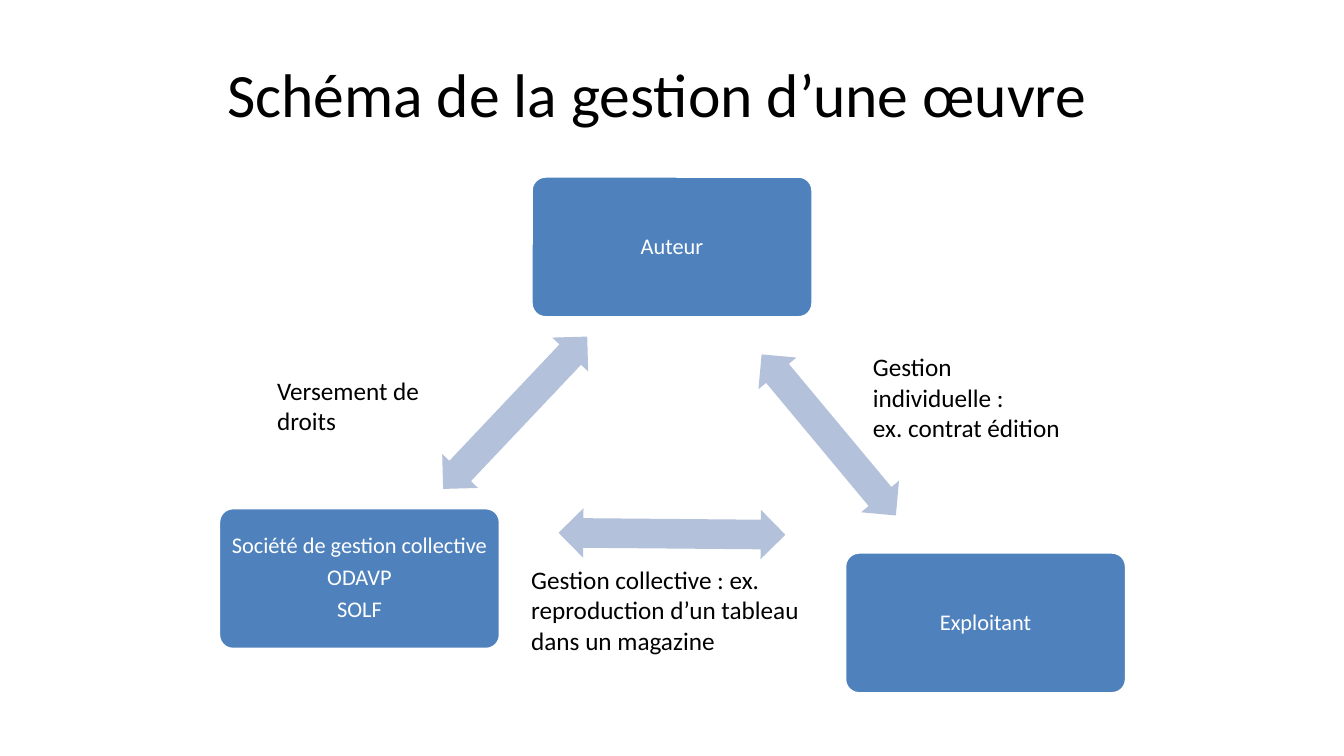
from pptx import Presentation
from pptx.dml.color import RGBColor
from pptx.enum import shapes, text
from pptx.util import Inches, Pt


def colour(hex_code):
    return RGBColor.from_string(hex_code)


def write(frame, wording, size, hex_code, align):
    """Fill a text frame, one paragraph per line of wording."""
    frame.word_wrap = True
    frame.text = wording
    for para in frame.paragraphs:
        para.alignment = align
        for span in para.runs:
            span.font.name = "Calibri"
            span.font.size = Pt(size)
            span.font.color.rgb = colour(hex_code)


deck = Presentation()
deck.slide_width, deck.slide_height = Inches(13.33), Inches(7.5)
page = deck.slides.add_slide(deck.slide_layouts[5])

title = page.shapes.title
title.left, title.top = Inches(0.67), Inches(0.3)
title.width, title.height = Inches(12), Inches(1.25)
write(title.text_frame, "Schéma de la gestion d’une œuvre", 44, "000000", text.PP_ALIGN.CENTER)
title.text_frame.vertical_anchor = text.MSO_ANCHOR.MIDDLE
title.text_frame.margin_right = Inches(0.4)

# Parties: left, top, wording
parties = [
    (5.27, 1.75, "Auteur"),
    (8.38, 5.48, "Exploitant"),
    (2.17, 5.04, "Société de gestion collective\nODAVP\nSOLF"),
]
for left, top, wording in parties:
    party = page.shapes.add_shape(
        shapes.MSO_SHAPE.ROUNDED_RECTANGLE, Inches(left), Inches(top), Inches(2.79), Inches(1.4))
    party.adjustments[0] = 0.1
    party.shadow.inherit = False
    party.fill.solid()
    party.fill.fore_color.rgb = colour("4F81BD")
    party.line.color.rgb = colour("FFFFFF")
    party.line.width = Pt(2)
    frame = party.text_frame
    write(frame, wording, 16, "FFFFFF", text.PP_ALIGN.CENTER)
    frame.vertical_anchor = text.MSO_ANCHOR.MIDDLE
    frame.margin_left = frame.margin_right = Inches(0.07)
    frame.margin_top = frame.margin_bottom = Inches(0.07)
    for para in frame.paragraphs:
        para.line_spacing = 0.9
        para.space_after = Pt(5.6)

# Exchanges between parties: left, top, width, rotation
exchanges = [
    (7.18, 4.07, 2.08, 50.2),
    (5.54, 5.05, 2.25, 180.5),
    (4.07, 3.85, 2.08, 313.4),
]
for left, top, width, rotation in exchanges:
    arrow = page.shapes.add_shape(
        shapes.MSO_SHAPE.LEFT_RIGHT_ARROW, Inches(left), Inches(top), Inches(width), Inches(0.49))
    arrow.adjustments[0] = 0.6
    arrow.adjustments[1] = 0.5
    arrow.rotation = rotation
    arrow.shadow.inherit = False
    arrow.fill.solid()
    arrow.fill.fore_color.rgb = colour("B3C1DB")
    arrow.line.fill.background()

# Captions: left, top, width, height, wording
captions = [
    (8.56, 3.44, 2.28, 1.01, "Gestion individuelle :\nex. contrat édition"),
    (5.17, 5.55, 2.99, 1.01, "Gestion collective : ex. reproduction d’un tableau dans un magazine"),
    (2.65, 3.67, 1.81, 0.71, "Versement de droits"),
]
for left, top, width, height, wording in captions:
    box = page.shapes.add_textbox(Inches(left), Inches(top), Inches(width), Inches(height))
    write(box.text_frame, wording, 18, "000000", text.PP_ALIGN.LEFT)

deck.save("out.pptx")
